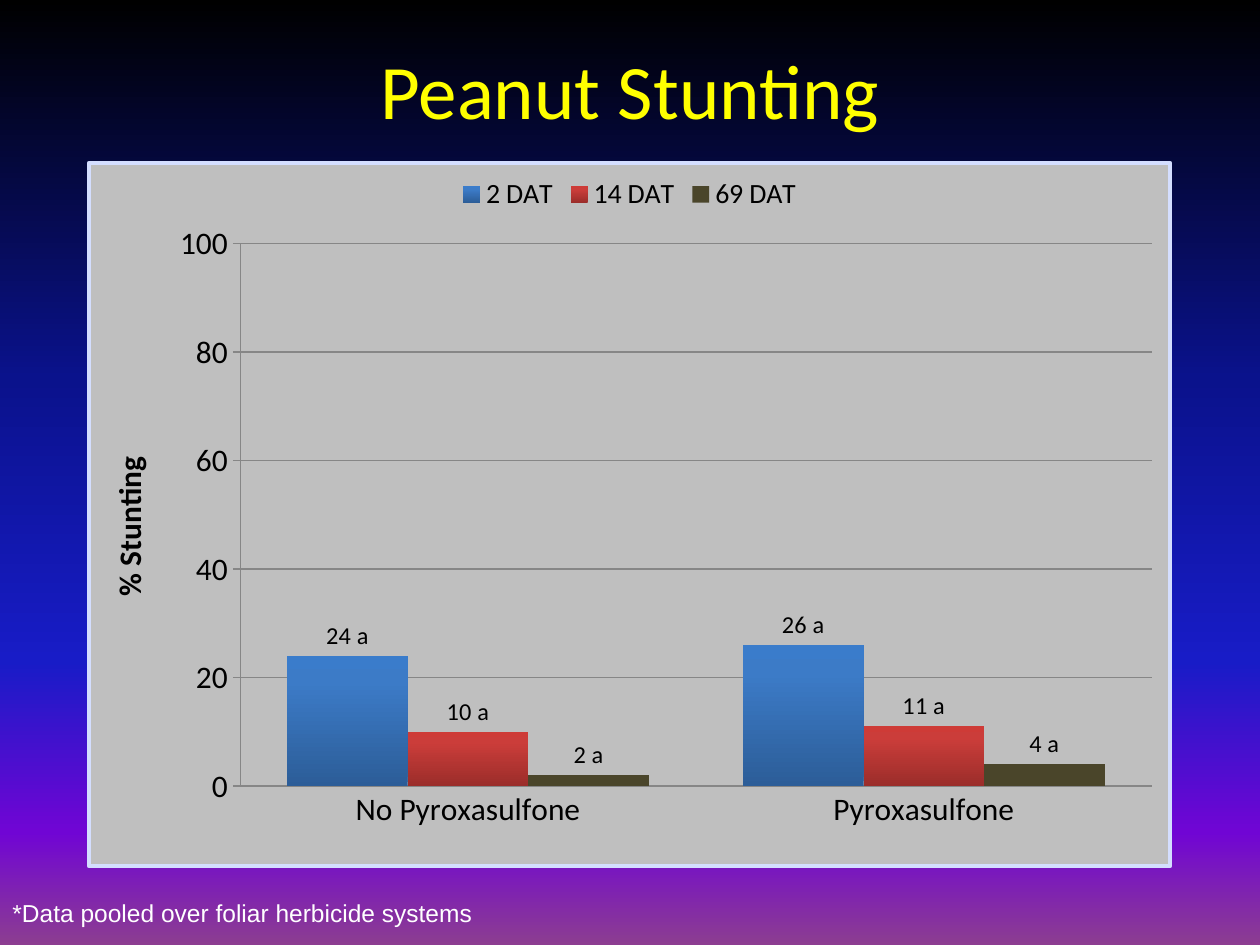
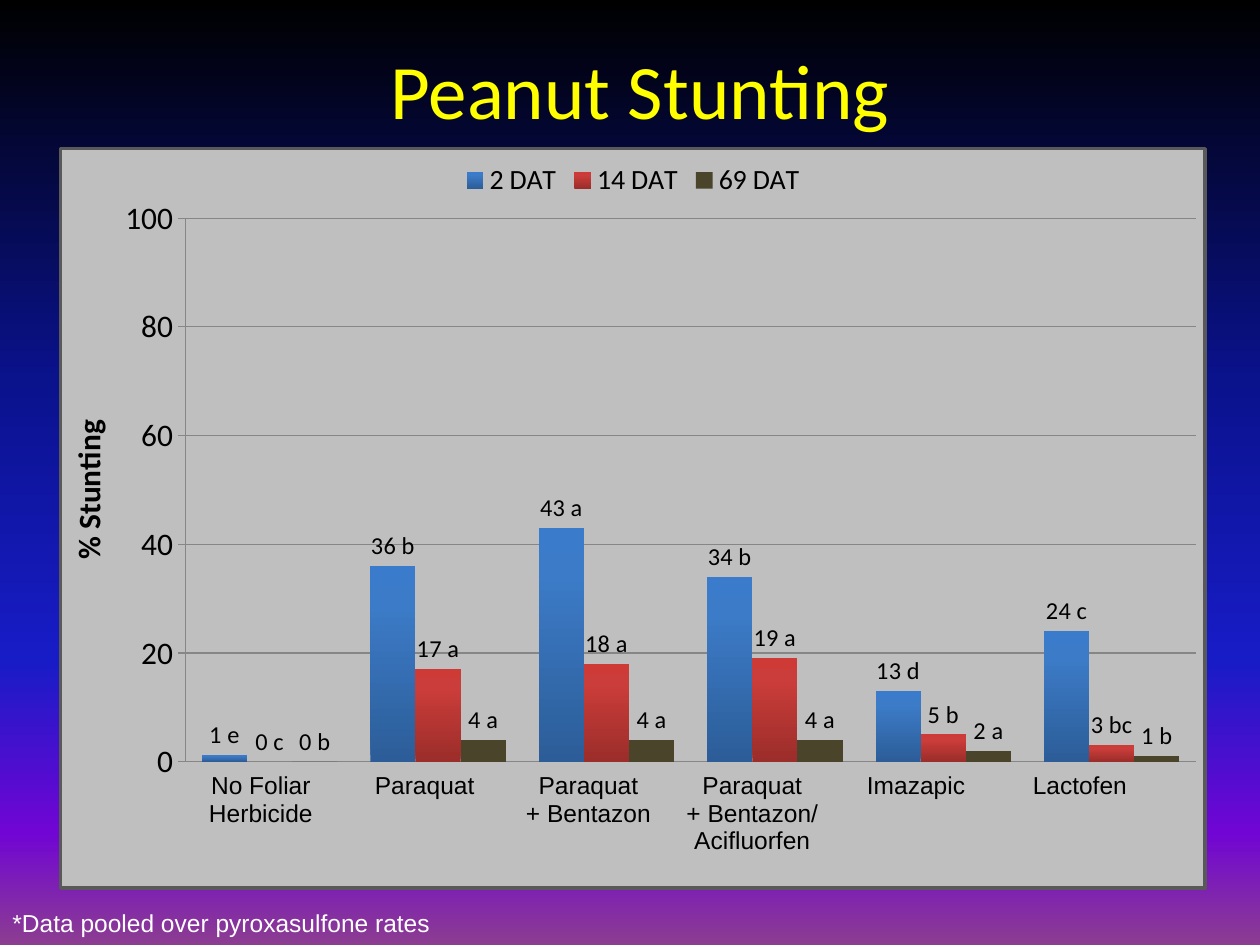
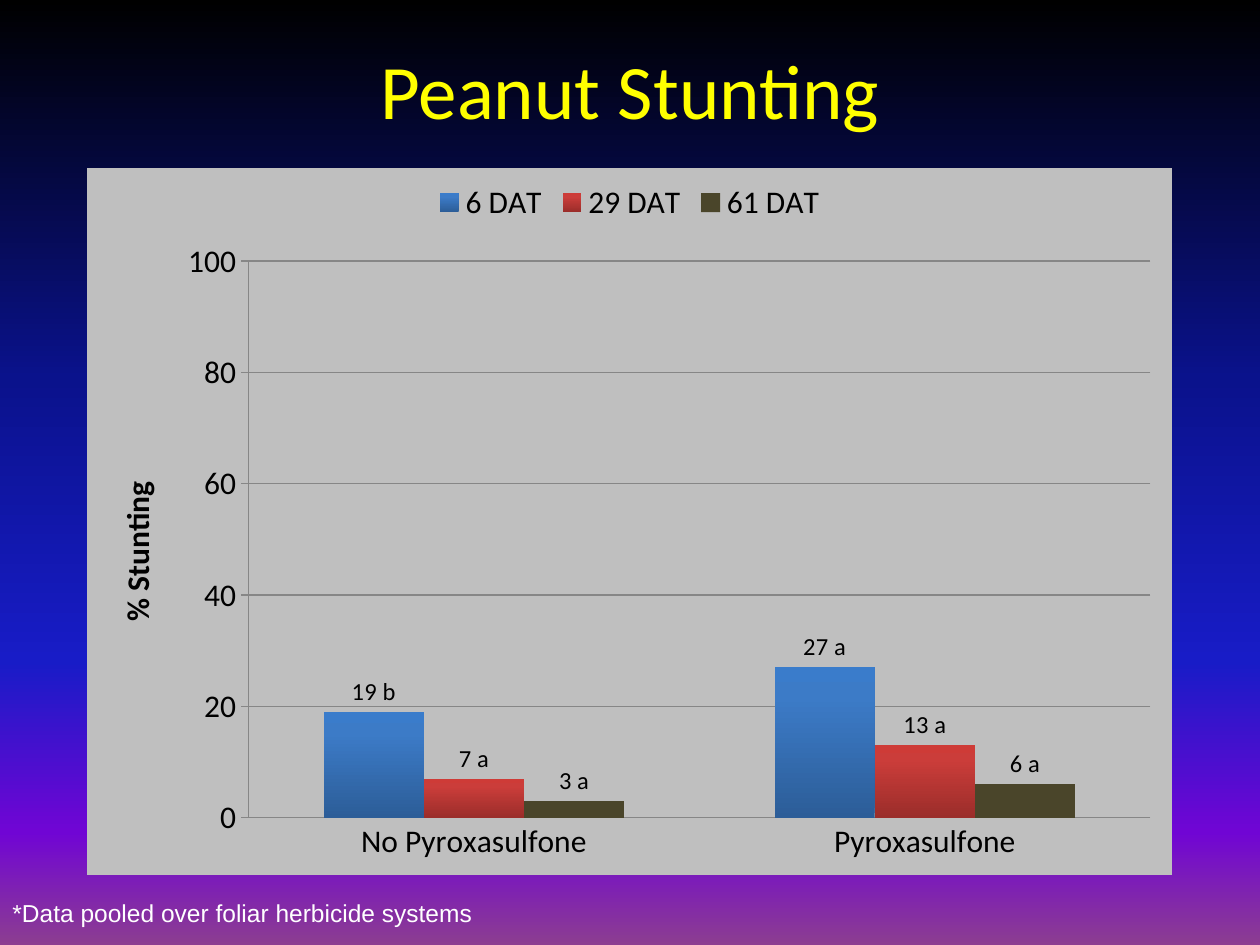
import pptx
import pptx.chart.data
import pptx.dml.color
import pptx.enum.chart
import pptx.enum.text
import pptx.oxml
import pptx.oxml.ns
import pptx.util
from lxml import etree

qn = pptx.oxml.ns.qn
Pt = pptx.util.Pt
EMU_PER_PX = 914400 / 126
BLACK, WHITE, YELLOW = "000000", "FFFFFF", "FFFF00"
PANEL, GRID = "BFBFBF", "868686"
BACKGROUND_STOPS = [(0, BLACK), (40, "0A128C"), (70, "181CC7"), (88, "7005D4"), (100, "8C3D91")]
# Each series is shaded from the foot of the bar up; a single stop is a solid fill.
SERIES_STOPS = [
    [(0, "2C5D98"), (80, "3C7BC7"), (100, "3A7CCB")],
    [(0, "9B2D2A"), (80, "CB3D3A"), (100, "CE3B37")],
    [(0, "4A452A")],
]
NO_TABLE_STYLE = "{2D5ABB26-0587-4C30-8999-92F81FD0307C}"
RATES = ["No Pyroxasulfone", "Pyroxasulfone"]
HERBICIDES = [
    ["No Foliar Herbicide"], ["Paraquat"], ["Paraquat", "+ Bentazon"],
    ["Paraquat", "+ Bentazon/ Acifluorfen"], ["Imazapic"], ["Lactofen"],
]

# Series: name, values, significance letters. Boxes: left, top, width, height in px.
SLIDES = [
    {
        "title_left": 63, "chart_box": (87, 161, 1085, 707), "border": "D4DEFF",
        "plot_layout": (0.14, 0.115, 0.843, 0.771), "gap": 78, "legend_size": 16,
        "categories": RATES,
        "series": [("2 DAT", [24, 26], "a a"), ("14 DAT", [10, 11], "a a"),
                   ("69 DAT", [2, 4], "a a")],
        "note": "*Data pooled over foliar herbicide systems", "note_box": (0, 892, 599, 43),
    },
    {
        "title_left": 73, "chart_box": (59, 147, 1148, 743), "border": "595959",
        "plot_layout": (0.109, 0.094, 0.883, 0.735), "gap": 73, "legend_size": 16,
        "categories": ["1", "2", "3", "4", "5", "6"],
        "series": [("2 DAT", [1.3, 36, 43, 34, 13, 24], "e b a b d c"),
                   ("14 DAT", [0, 17, 18, 19, 5, 3], "c a a a b bc"),
                   ("69 DAT", [0, 4, 4, 4, 2, 1], "b a a a a b")],
        "table_labels": HERBICIDES,
        "note": "*Data pooled over pyroxasulfone rates", "note_box": (0, 902, 494, 43),
    },
    {
        "title_left": 63, "chart_box": (87, 168, 1085, 707), "border": None,
        "plot_layout": None, "gap": 150, "legend_size": 18,
        "categories": RATES,
        "series": [("6 DAT", [19, 27], "b a"), ("29 DAT", [7, 13], "a a"),
                   ("61 DAT", [3, 6], "a a")],
        "note": "*Data pooled over foliar herbicide systems", "note_box": (0, 892, 651, 43),
    },
]


def rgb(value):
    return pptx.dml.color.RGBColor.from_string(value)


def px(*lengths):
    return [round(length * EMU_PER_PX) for length in lengths]


def set_gradient(gradient, stops, angle):
    """Replace the stops of an a:gradFill; the angle is clockwise in degrees."""
    stop_list = gradient.find(qn("a:gsLst"))
    stop_list.clear()
    for position, color in stops:
        stop = etree.SubElement(stop_list, qn("a:gs"), pos=str(position * 1000))
        etree.SubElement(stop, qn("a:srgbClr"), val=color)
    gradient.find(qn("a:lin")).set("ang", str(angle * 60000))


def add_run(paragraph, text, size, name, color, bold=False):
    run = paragraph.add_run()
    run.text = text
    run.font.size = Pt(size)
    run.font.name = name
    run.font.bold = bold
    run.font.color.rgb = rgb(color)


presentation = pptx.Presentation()
presentation.slide_width, presentation.slide_height = px(1260, 945)
master = presentation.slide_master
master.background.fill.gradient()
set_gradient(master.element.find(".//" + qn("a:gradFill")), BACKGROUND_STOPS, 90)
title_only = presentation.slide_layouts.get_by_name("Title Only")

for content in SLIDES:
    slide = presentation.slides.add_slide(title_only)
    title = slide.shapes.title
    title.left, title.top, title.width, title.height = px(content["title_left"], 10, 1134, 158)
    title.text_frame.vertical_anchor = pptx.enum.text.MSO_ANCHOR.MIDDLE
    paragraph = title.text_frame.paragraphs[0]
    paragraph.alignment = pptx.enum.text.PP_ALIGN.CENTER
    add_run(paragraph, "Peanut Stunting", 44, "Calibri", YELLOW)

    chart_data = pptx.chart.data.CategoryChartData()
    chart_data.categories = content["categories"]
    for series_name, values, letters in content["series"]:
        chart_data.add_series(series_name, values)
    chart = slide.shapes.add_chart(
        pptx.enum.chart.XL_CHART_TYPE.COLUMN_CLUSTERED, *px(*content["chart_box"]), chart_data
    ).chart
    chart.has_title = False
    chart.font.name = "Calibri"
    chart.font.size = Pt(18)
    chart.font.color.rgb = rgb(BLACK)
    chart.has_legend = True
    chart.legend.position = pptx.enum.chart.XL_LEGEND_POSITION.TOP
    chart.legend.include_in_layout = False
    chart.legend.font.size = Pt(content["legend_size"])

    # Panel behind the chart
    border = content["border"]
    line_fill = f'<a:solidFill><a:srgbClr val="{border}"/></a:solidFill>' if border else "<a:noFill/>"
    chart_space = chart._chartSpace
    chart_space.find(qn("c:chart")).addnext(pptx.oxml.parse_xml(
        f'<c:spPr {pptx.oxml.ns.nsdecls("c", "a")}>'
        f'<a:solidFill><a:srgbClr val="{PANEL}"/></a:solidFill>'
        f'<a:ln w="25400">{line_fill}</a:ln></c:spPr>'))

    if content["plot_layout"]:
        plot_area = chart_space.find(".//" + qn("c:plotArea"))
        for automatic_layout in plot_area.findall(qn("c:layout")):
            plot_area.remove(automatic_layout)
        layout = etree.Element(qn("c:layout"))
        manual = etree.SubElement(layout, qn("c:manualLayout"))
        settings = [("layoutTarget", "inner"), ("xMode", "edge"), ("yMode", "edge")]
        settings += zip("xywh", content["plot_layout"])
        for tag, value in settings:
            etree.SubElement(manual, qn("c:" + tag), val=str(value))
        plot_area.insert(0, layout)

    value_axis, category_axis = chart.value_axis, chart.category_axis
    value_axis.minimum_scale, value_axis.maximum_scale, value_axis.major_unit = 0, 100, 20
    value_axis.major_tick_mark = pptx.enum.chart.XL_TICK_MARK.OUTSIDE
    value_axis.has_major_gridlines = True
    add_run(value_axis.axis_title.text_frame.paragraphs[0], "% Stunting", 18, "Calibri", BLACK, True)
    category_axis.major_tick_mark = pptx.enum.chart.XL_TICK_MARK.NONE
    category_axis.visible = "table_labels" not in content
    for line in (value_axis.format.line, category_axis.format.line, value_axis.major_gridlines.format.line):
        line.color.rgb = rgb(GRID)
        line.width = Pt(0.75)

    plot = chart.plots[0]
    plot.gap_width = content["gap"]
    plot.overlap = 0
    plot.vary_by_categories = False
    outside_end = pptx.enum.chart.XL_LABEL_POSITION.OUTSIDE_END
    for series, (_, values, letters), stops in zip(plot.series, content["series"], SERIES_STOPS):
        series.invert_if_negative = False
        fill = series.format.fill
        if len(stops) > 1:
            fill.gradient()
            set_gradient(series._element.find(".//" + qn("a:gradFill")), stops, 270)
        else:
            fill.solid()
            fill.fore_color.rgb = rgb(stops[0][1])
        series.data_labels.show_value = True
        series.data_labels.position = outside_end
        series.data_labels.font.size = Pt(14)
        for index, (value, letter) in enumerate(zip(values, letters.split())):
            label = series.points[index].data_label
            add_run(label.text_frame.paragraphs[0], f"{value:.0f} {letter}", 14, "Calibri", BLACK)
            label.position = outside_end

    if "table_labels" in content:
        labels = content["table_labels"]
        table = slide.shapes.add_table(1, len(labels), *px(179, 766, 983, 116)).table
        table.first_row = table.horz_banding = False
        table._tbl.tblPr.find(qn("a:tableStyleId")).text = NO_TABLE_STYLE
        for cell, lines in zip(table.rows[0].cells, labels):
            cell.fill.background()
            for index, text in enumerate(lines):
                frame = cell.text_frame
                paragraph = frame.add_paragraph() if index else frame.paragraphs[0]
                paragraph.alignment = pptx.enum.text.PP_ALIGN.CENTER
                add_run(paragraph, text, 14, "Arial", BLACK)

    note = slide.shapes.add_textbox(*px(*content["note_box"])).text_frame
    note.word_wrap = True
    note.auto_size = pptx.enum.text.MSO_AUTO_SIZE.SHAPE_TO_FIT_TEXT
    add_run(note.paragraphs[0], content["note"], 14, "Arial", WHITE)

presentation.save("out.pptx")
